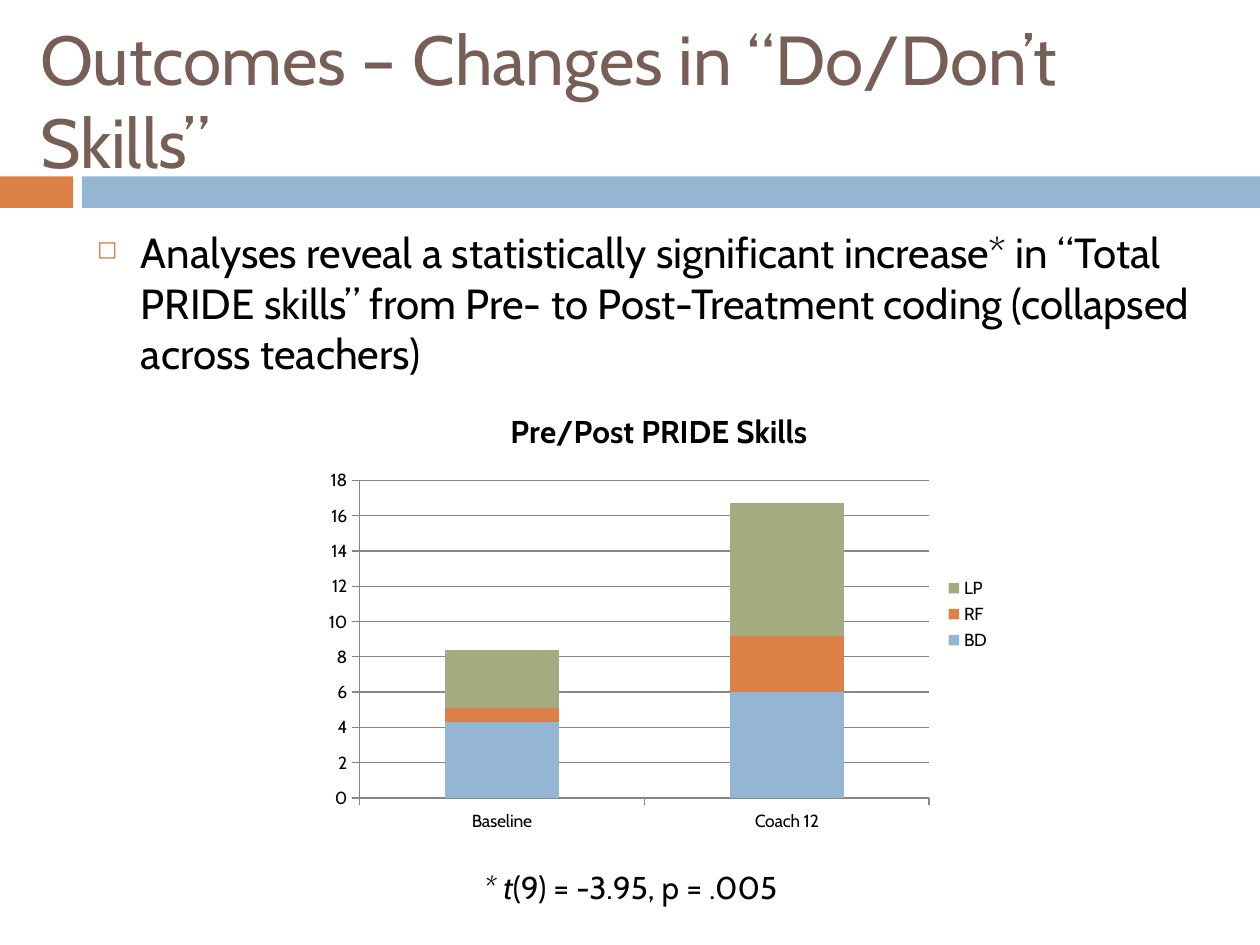
from pptx import Presentation
from pptx.chart.data import CategoryChartData
from pptx.dml.color import RGBColor
from pptx.enum.chart import XL_CHART_TYPE as ChartType
from pptx.enum.chart import XL_LEGEND_POSITION as LegendPosition
from pptx.enum.chart import XL_TICK_MARK as TickMark
from pptx.enum.shapes import MSO_SHAPE as Shape
from pptx.enum.text import MSO_ANCHOR as Anchor
from pptx.oxml import parse_xml
from pptx.oxml.ns import nsdecls
from pptx.util import Inches, Pt

FONT = "Cabin"
COLORS = {
    "orange": "DD8047",
    "blue": "94B6D2",
    "green": "A5AB81",
    "brown": "775F55",
    "black": "000000",
    "grid": "868686",
}


def color(name):
    return RGBColor.from_string(COLORS[name])


def add_text(left, top, width, height, runs, size, color_name):
    """Add a wrapping text box of (text, italic) runs and return its frame."""
    box = slide.shapes.add_textbox(Inches(left), Inches(top), Inches(width), Inches(height))
    frame = box.text_frame
    frame.word_wrap = True
    paragraph = frame.paragraphs[0]
    added_runs = [paragraph.add_run() for _ in runs]
    for run, (text, italic) in zip(added_runs, runs):
        run.text = text
        run.font.italic = italic
    for font in [paragraph.font] + [run.font for run in added_runs]:
        font.name = FONT
        font.size = Pt(size)
        font.color.rgb = color(color_name)
    return frame


presentation = Presentation()
presentation.slide_width = Inches(10)
presentation.slide_height = Inches(7.5)
slide = presentation.slides.add_slide(presentation.slide_layouts[6])

# Divider band
for left, width, fill in [(0, 0.58, "orange"), (0.65, 9.35, "blue")]:
    band = slide.shapes.add_shape(
        Shape.RECTANGLE, Inches(left), Inches(1.4), Inches(width), Inches(0.25))
    band.shadow.inherit = False
    band.fill.solid()
    band.fill.fore_color.rgb = color(fill)
    band.line.fill.background()

# Title
title_frame = add_text(
    0.22, 0.25, 9.37, 1.08,
    [("Outcomes – Changes in “Do/Don’t Skills”", None)], 39.6, "brown")
title_frame.vertical_anchor = Anchor.MIDDLE

# Bulleted finding
finding_frame = add_text(
    0.67, 1.75, 8.92, 1.3,
    [("Analyses reveal a statistically significant increase* in “Total PRIDE skills” "
      "from Pre- to Post-Treatment coding (collapsed across teachers)", None)], 24, "black")
finding = finding_frame.paragraphs[0]
finding.space_before = Pt(7)
properties = finding._p.get_or_add_pPr()
properties.set("marL", str(Inches(0.35)))
properties.set("indent", str(-Inches(0.35)))
default_run = properties.find("{*}defRPr")
for part in [
    f'<a:buClr {nsdecls("a")}><a:srgbClr val="{COLORS["orange"]}"/></a:buClr>',
    f'<a:buSzPct {nsdecls("a")} val="60000"/>',
    f'<a:buChar {nsdecls("a")} char="◻"/>',
]:
    default_run.addprevious(parse_xml(part))

# Stacked column chart
chart_data = CategoryChartData()
chart_data.categories = ["Baseline", "Coach 12"]
series_rows = [
    ("BD", (4.3, 6), "blue"),
    ("RF", (0.8, 3.2), "orange"),
    ("LP", (3.3, 7.5), "green"),
]
for name, values, _ in series_rows:
    chart_data.add_series(name, values)
chart = slide.shapes.add_chart(
    ChartType.COLUMN_STACKED, Inches(2.5), Inches(3.08), Inches(5.46), Inches(3.59),
    chart_data).chart
chart.font.name = FONT
chart.font.size = Pt(10)
chart.font.color.rgb = color("black")

chart.has_title = True
chart_title = chart.chart_title.text_frame.paragraphs[0]
chart_title.text = "Pre/Post PRIDE Skills"
chart_title.font.name = FONT
chart_title.font.size = Pt(18)
chart_title.font.bold = True
chart_title.font.color.rgb = color("black")

chart.has_legend = True
chart.legend.position = LegendPosition.RIGHT
chart.legend.include_in_layout = False

plot = chart.plots[0]
plot.gap_width = 150
plot.overlap = 100
plot.vary_by_categories = False
for series, (_, _, fill) in zip(plot.series, series_rows):
    series.format.fill.solid()
    series.format.fill.fore_color.rgb = color(fill)

value_axis = chart.value_axis
value_axis.minimum_scale = 0
value_axis.maximum_scale = 18
value_axis.major_unit = 2
value_axis.has_major_gridlines = True
for axis in (chart.category_axis, value_axis):
    axis.major_tick_mark = TickMark.OUTSIDE
for line in (chart.category_axis.format.line, value_axis.format.line,
             value_axis.major_gridlines.format.line):
    line.color.rgb = color("grid")
    line.width = Pt(0.75)

# Test statistic
add_text(3.74, 6.84, 2.87, 0.4,
         [("* t", True), ("(9) = -3.95, p = .005", False)], 18, "black")

presentation.save("out.pptx")
